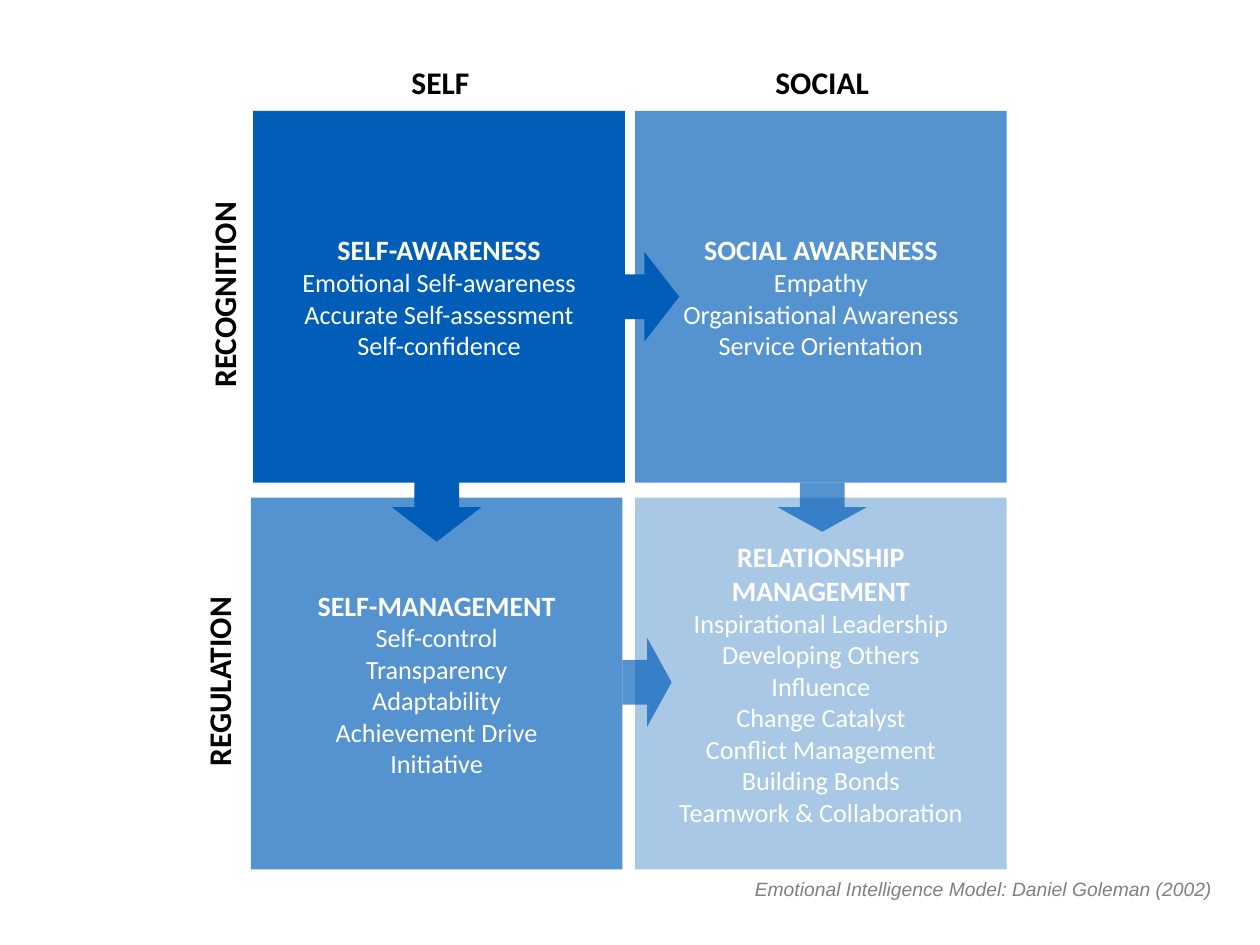
from dataclasses import dataclass

from lxml.etree import SubElement
from pptx import Presentation
from pptx.dml.color import RGBColor
from pptx.enum.shapes import MSO_SHAPE
from pptx.enum.text import MSO_ANCHOR, PP_ALIGN
from pptx.oxml.ns import qn
from pptx.util import Inches, Pt

COLORS = {"blue": "005EB8", "white": "FFFFFF", "black": "000000", "gray": "808080"}
SIDE = 2.95
TOP_ROW, BOTTOM_ROW = 0.88, 3.95
RIGHT_COLUMN = 5.04
LABEL_HEIGHT = 0.4
ARROW_HEIGHT = 0.71


@dataclass
class Quadrant:
    left: float
    top: float
    opacity: int
    heading: str
    skills: list[str]


@dataclass
class Label:
    text: str
    left: float
    top: float
    width: float = SIDE
    rotation: int = 0


@dataclass
class Arrow:
    left: float
    top: float
    width: float
    opacity: int = 100
    rotation: int = 0


QUADRANTS = [
    Quadrant(RIGHT_COLUMN, TOP_ROW, 67, "SOCIAL AWARENESS",
             ["Empathy", "Organisational Awareness", "Service Orientation"]),
    Quadrant(RIGHT_COLUMN, BOTTOM_ROW, 34, "RELATIONSHIP MANAGEMENT",
             ["Inspirational Leadership", "Developing Others", "Influence", "Change Catalyst",
              "Conflict Management", "Building Bonds", "Teamwork & Collaboration"]),
    Quadrant(2.01, TOP_ROW, 100, "SELF-AWARENESS",
             ["Emotional Self-awareness", "Accurate Self-assessment", "Self-confidence"]),
    Quadrant(1.99, BOTTOM_ROW, 67, "SELF-MANAGEMENT",
             ["Self-control", "Transparency", "Adaptability", "Achievement Drive", "Initiative"]),
]
LABELS = [
    Label("SELF", 2.02, 0.45),
    Label("SOCIAL", 5.03, 0.45, width=2.99),
    Label("REGULATION", 0.26, 5.21, rotation=270),
    Label("RECOGNITION", 0.3, 2.14, rotation=270),
]
ARROWS = [
    Arrow(4.84, 2, 0.55),
    Arrow(4.94, 5.06, 0.39, opacity=67),
    Arrow(6.33, 3.67, 0.39, opacity=67, rotation=90),
    Arrow(3.19, 3.67, 0.55, rotation=90),
]


def add_filled_shape(page, kind, left: float, top: float, width: float, height: float,
                     color: str, opacity: int = 100):
    shape = page.shapes.add_shape(kind, Inches(left), Inches(top), Inches(width), Inches(height))
    shape.shadow.inherit = False
    shape.line.fill.background()
    shape.fill.solid()
    shape.fill.fore_color.rgb = RGBColor.from_string(COLORS[color])
    if opacity < 100:
        color_element = shape.fill._xPr.find(qn("a:solidFill"))[0]
        SubElement(color_element, qn("a:alpha"), val=str(opacity * 1000))
    return shape


def write_paragraph(paragraph, text: str, size: int, color: str, bold: bool = False,
                    italic: bool = False, font: str = "Calibri",
                    alignment: PP_ALIGN = PP_ALIGN.CENTER) -> None:
    paragraph.text = text
    paragraph.alignment = alignment
    paragraph.font.name = font
    paragraph.font.size = Pt(size)
    paragraph.font.bold = bold
    paragraph.font.italic = italic
    paragraph.font.color.rgb = RGBColor.from_string(COLORS[color])


def add_quadrant(page, quadrant: Quadrant) -> None:
    box = add_filled_shape(page, MSO_SHAPE.RECTANGLE, quadrant.left, quadrant.top,
                           SIDE, SIDE, "blue", quadrant.opacity)
    frame = box.text_frame
    frame.word_wrap = True
    frame.vertical_anchor = MSO_ANCHOR.MIDDLE
    write_paragraph(frame.paragraphs[0], quadrant.heading, 16, "white", bold=True)
    for skill in quadrant.skills:
        write_paragraph(frame.add_paragraph(), skill, 15, "white")


def add_label(page, label: Label) -> None:
    box = page.shapes.add_textbox(Inches(label.left), Inches(label.top),
                                  Inches(label.width), Inches(LABEL_HEIGHT))
    box.rotation = label.rotation
    box.text_frame.word_wrap = True
    write_paragraph(box.text_frame.paragraphs[0], label.text, 18, "black", bold=True)


def add_arrow(page, arrow: Arrow) -> None:
    shape = add_filled_shape(page, MSO_SHAPE.RIGHT_ARROW, arrow.left, arrow.top,
                             arrow.width, ARROW_HEIGHT, "blue", arrow.opacity)
    shape.rotation = arrow.rotation


def add_credit(page, text: str) -> None:
    box = add_filled_shape(page, MSO_SHAPE.RECTANGLE, 2.08, 6.91, 7.64, 0.29, "white")
    box.text_frame.word_wrap = True
    box.text_frame.vertical_anchor = MSO_ANCHOR.TOP
    write_paragraph(box.text_frame.paragraphs[0], text, 11, "gray", italic=True,
                    font="Arial", alignment=PP_ALIGN.RIGHT)


def main() -> None:
    deck = Presentation()
    deck.slide_width, deck.slide_height = Inches(10), Inches(7.5)
    page = deck.slides.add_slide(deck.slide_layouts[6])
    for quadrant in QUADRANTS:
        add_quadrant(page, quadrant)
    for label in LABELS:
        add_label(page, label)
    add_credit(page, "Emotional Intelligence Model: Daniel Goleman (2002)")
    for arrow in ARROWS:
        add_arrow(page, arrow)
    deck.save("out.pptx")


if __name__ == "__main__":
    main()
